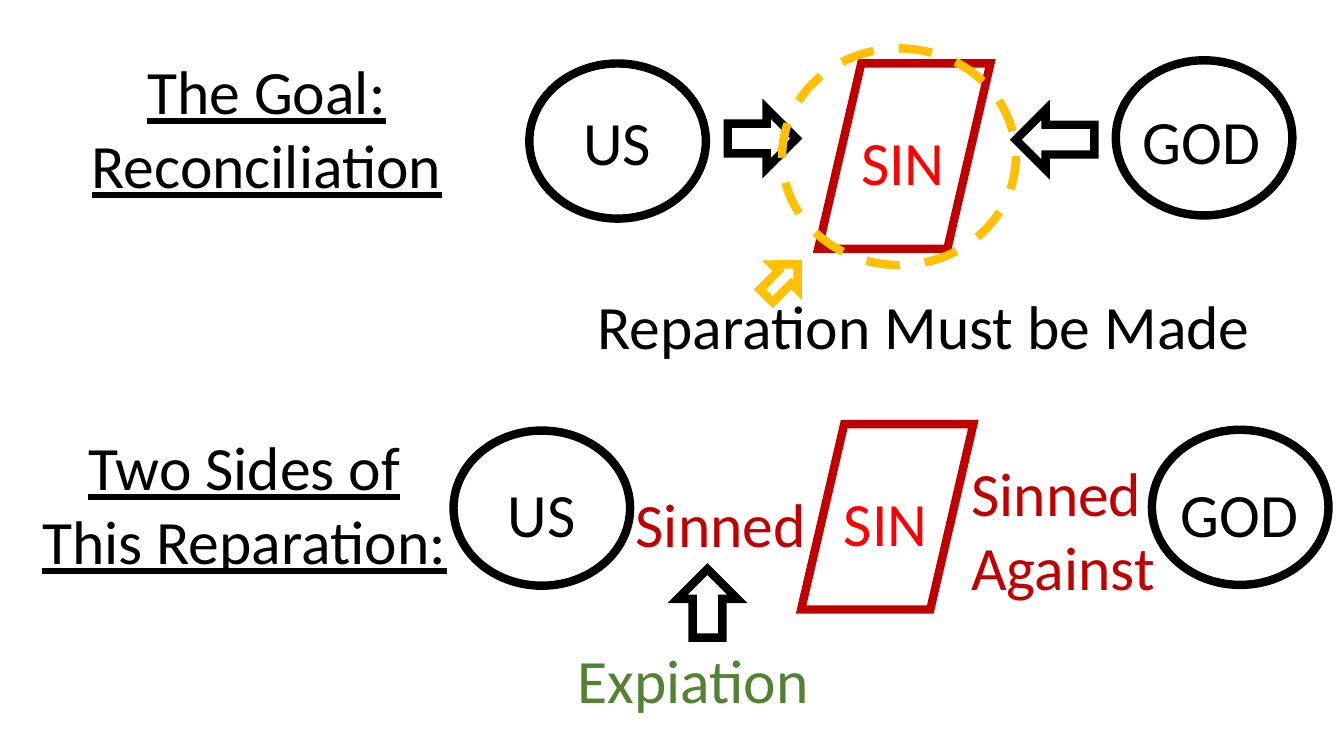
from lxml import etree
from pptx import Presentation
from pptx.dml.color import RGBColor
from pptx.enum.dml import MSO_LINE
from pptx.enum.shapes import MSO_SHAPE
from pptx.enum.text import MSO_AUTO_SIZE, PP_ALIGN
from pptx.oxml.ns import qn
from pptx.util import Cm, Pt

OVAL, SLAB = MSO_SHAPE.OVAL, MSO_SHAPE.PARALLELOGRAM
LEFT, RIGHT, UP = MSO_SHAPE.LEFT_ARROW, MSO_SHAPE.RIGHT_ARROW, MSO_SHAPE.UP_ARROW
DASH = MSO_LINE.DASH
CENTER, ALIGN_LEFT = PP_ALIGN.CENTER, PP_ALIGN.LEFT
GROW = MSO_AUTO_SIZE.SHAPE_TO_FIT_TEXT

COLORS = {
    "black": "000000",
    "dark_red": "C00000",
    "red": "FF0000",
    "gold": "FFC000",
    "green": "548235",
}
FONT = {"name": "Calibri", "size": Pt(44)}
LINE_H, TWO_LINES_H = 2.13, 4.01
PARTY_SIZE, SIN_SIZE = (4.45, 3.91), (4.34, 4.67)


def rgb(color):
    """Return the named colour."""
    return RGBColor.from_string(COLORS[color])


def add_outline(s, kind, box, color="black", dash=None, rotation=0):
    """Draw an unfilled shape with a thick, sharp-cornered outline."""
    sp = s.shapes.add_shape(kind, *map(Cm, box))
    sp.shadow.inherit = False
    sp.fill.background()
    sp.rotation = rotation
    sp.line.color.rgb = rgb(color)
    for attr, value in {"width": Pt(6), "dash_style": dash}.items():
        setattr(sp.line, attr, value)
    etree.SubElement(sp.line._ln, qn("a:miter"), lim="800000")


def add_text(s, text, box, color="black", wrap=False, heading=False):
    """Add a text box, underlined and centred for a heading."""
    tf = s.shapes.add_textbox(*map(Cm, box)).text_frame
    for attr, value in {"word_wrap": wrap, "auto_size": GROW}.items():
        setattr(tf, attr, value)
    p = tf.paragraphs[0]
    p.alignment = CENTER if heading else ALIGN_LEFT
    r = p.add_run()
    r.text = text
    for attr, value in {**FONT, "underline": heading or None}.items():
        setattr(r.font, attr, value)
    r.font.color.rgb = rgb(color)


def add_party(s, name, left, top, label):
    """Draw a circle with its name at the given label offset and width."""
    add_outline(s, OVAL, (left, top, *PARTY_SIZE))
    dx, dy, width = label
    add_text(s, name, (left + dx, top + dy, width, LINE_H))


def add_sin(s, left, top):
    """Draw the slanted barrier labelled SIN."""
    add_outline(s, SLAB, (left, top, *SIN_SIZE), "dark_red")
    add_text(s, "SIN", (left + 0.83, top + 1.4, 2.84, LINE_H), "red")


def add_goal(s, left, top, width):
    """Draw the goal: both parties move towards the sin between them."""
    add_text(s, "The Goal: Reconciliation", (left, top, 9.88, TWO_LINES_H),
             wrap=True, heading=True)
    add_party(s, "US", left + 11.56, top + 0.38, (1.11, 0.89, 2.24))
    add_party(s, "GOD", left + width - 4.45, top + 0.3, (0.43, 0.94, 3.71))
    add_outline(s, RIGHT, (left + 16.56, top + 1.52, 1.73, 1.5))
    add_outline(s, LEFT, (left + 23.82, top + 1.55, 1.98, 1.5))
    add_sin(s, left + 18.84, top + 0.38)
    add_outline(s, OVAL, (left + 17.93, top, 5.89, 5.46), "gold", DASH)
    add_text(s, "Reparation Must be Made",
             (left + 13.03, top + 5.92, 17.45, LINE_H))
    add_outline(s, UP, (left + 17.47, top + 5.28, 0.91, 1.12), "gold",
                rotation=44.8)


def add_two_sides(s, left, top, width):
    """Draw the two sides of the reparation, with expiation on ours."""
    add_text(s, "Two Sides of This Reparation:", (left, top, 11, TWO_LINES_H),
             wrap=True, heading=True)
    add_party(s, "US", left + 10.77, top + 0.16, (1.12, 1.01, 2.24))
    add_party(s, "GOD", left + width - 4.45, top + 0.14, (0.48, 1.03, 3.71))
    add_sin(s, left + 19.53, top)
    add_text(s, "Sinned", (left + 15.11, top + 1.43, 4.9, LINE_H), "dark_red")
    add_text(s, "Sinned Against", (left + 23.57, top + 0.64, 5.66, TWO_LINES_H),
             "dark_red", wrap=True)
    add_outline(s, UP, (left + 16.42, top + 3.65, 1.5, 1.73))
    add_text(s, "Expiation", (left + 13.64, top + 5.36, 6.76, LINE_H), "green")


def main():
    """Build the slide and save it."""
    prs = Presentation()
    prs.slide_width, prs.slide_height = Cm(33.87), Cm(19.05)
    s = prs.slides.add_slide(prs.slide_layouts[6])
    add_goal(s, 1.78, 1.22, 30.79)
    add_two_sides(s, 0.66, 10.69, 32.82)
    prs.save("out.pptx")


if __name__ == "__main__":
    main()
